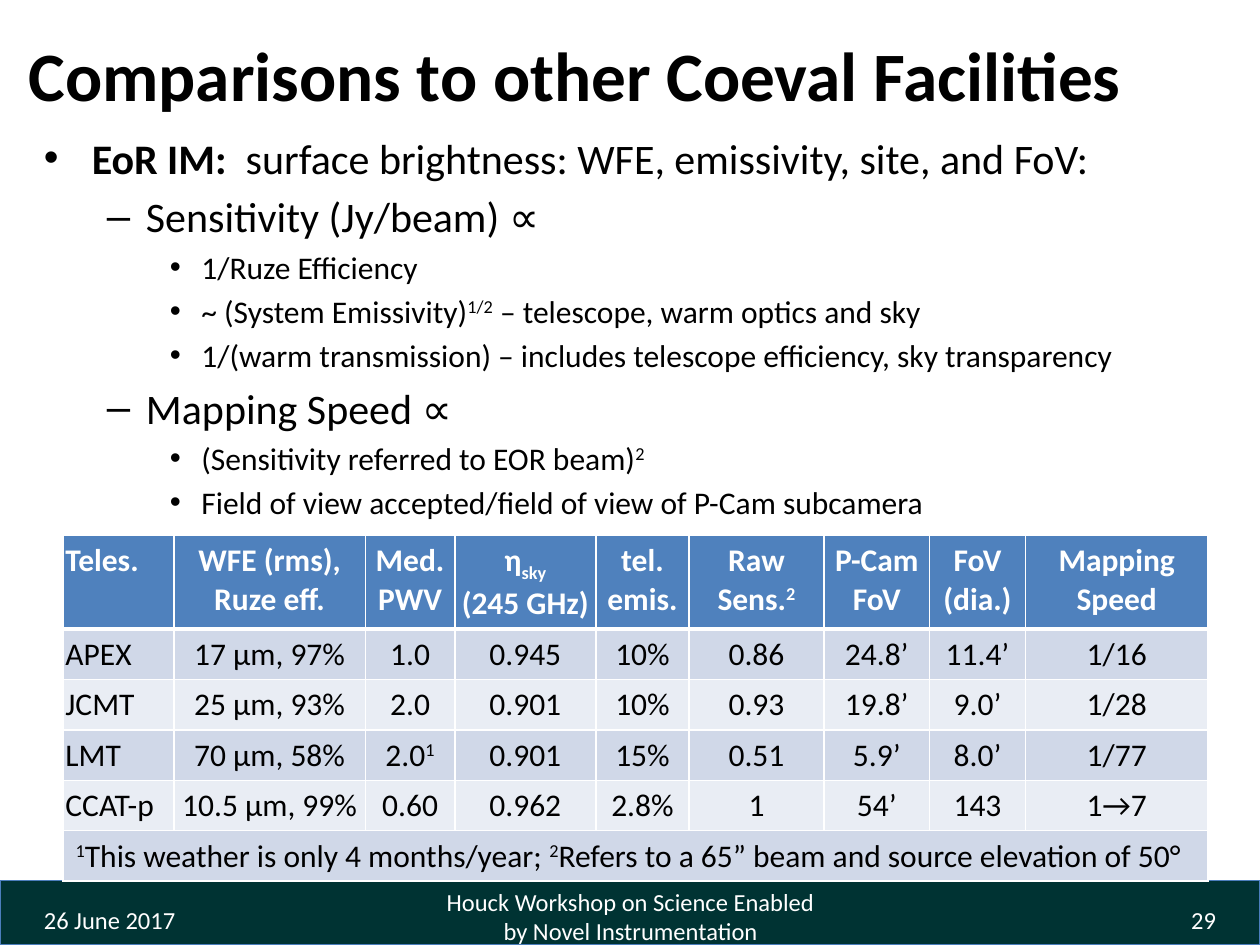
from dataclasses import dataclass

import pptx
import pptx.dml.color
import pptx.enum.shapes
import pptx.enum.text
import pptx.oxml
import pptx.oxml.ns
import pptx.util
from pptx.util import Inches

ALIGN = pptx.enum.text.PP_ALIGN
ANCHOR = pptx.enum.text.MSO_ANCHOR


@dataclass(frozen=True)
class Theme:
    font: str = "Calibri"
    black: str = "000000"
    white: str = "FFFFFF"
    footer: str = "003333"
    footer_line: str = "4B7EBC"
    header: str = "4F81BD"
    bands: tuple = ("D0D8E8", "E9EDF4")
    title_size: float = 39.6
    large: float = 24
    normal: float = 18
    small: float = 14


@dataclass(frozen=True)
class Level:
    margin: float
    indent: float
    char: str


@dataclass(frozen=True)
class Bullet:
    level: int
    size: float
    text: str


@dataclass(frozen=True)
class Label:
    text: str
    box: tuple
    size: float
    color: str
    align: int
    bold: bool = False


T = Theme()
LEVELS = (Level(0.38, -0.38, "•"), Level(0.81, -0.31, "–"), Level(1.25, -0.25, "•"))

# In rich text, "|" separates runs; a leading ^ raises, _ lowers, * makes bold
BULLETS = (
    Bullet(0, T.large, "*EoR IM:  |surface brightness: WFE, emissivity, site, and FoV:"),
    Bullet(1, T.large, "Sensitivity (Jy/beam) ∝"),
    Bullet(2, T.normal, "1/Ruze Efficiency"),
    Bullet(2, T.normal, "~ (System Emissivity)|^1/2| – telescope, warm optics and sky"),
    Bullet(2, T.normal, "1/(warm transmission) – includes telescope efficiency, sky transparency"),
    Bullet(1, T.large, "Mapping Speed ∝"),
    Bullet(2, T.normal, "(Sensitivity referred to EOR beam)|^2"),
    Bullet(2, T.normal, "Field of view accepted/field of view of P-Cam subcamera"),
)

LABELS = (
    Label("Comparisons to other Coeval Facilities", (-0.02, -0.04, 9.17, 1.25),
          T.title_size, T.black, ALIGN.CENTER, True),
    Label("29", (7.42, 7.1, 2.33, 0.4), T.small, T.white, ALIGN.RIGHT),
    Label("Houck Workshop on Science Enabled by Novel Instrumentation",
          (3.42, 7.07, 3.17, 0.4), T.small, T.white, ALIGN.CENTER),
    Label("26 June 2017", (0.25, 7.1, 2.33, 0.4), T.small, T.white, ALIGN.LEFT),
)

COLUMNS = (0.88, 1.52, 0.71, 1.12, 0.74, 1.07, 0.84, 0.76, 1.45)
ROWS = (
    ("Teles.", "WFE (rms), Ruze eff.", "Med. PWV", "η|_sky\n(245 GHz)", "tel. emis.",
     "Raw Sens.|^2", "P-Cam FoV", "FoV\n(dia.)", "Mapping Speed"),
    ("APEX", "17 μm, 97%", "1.0", "0.945", "10%", "0.86", "24.8’", "11.4’", "1/16"),
    ("JCMT", "25 μm, 93%", "2.0", "0.901", "10%", "0.93", "19.8’", "9.0’", "1/28"),
    ("LMT", "70 μm, 58%", "2.0|^1", "0.901", "15%", "0.51", "5.9’", "8.0’", "1/77"),
    ("CCAT-p", "10.5 μm, 99%", "0.60", "0.962", "2.8%", "1", "54’", "143", "1→7"),
)
NOTE = "^1|This weather is only 4 months/year; |^2|Refers to a 65” beam and source elevation of 50°"
HEADER_HEIGHT, ROW_HEIGHT = 0.74, 0.4


def rgb(value: str):
    return pptx.dml.color.RGBColor.from_string(value)


def add_xml(parent, tag: str, body: str) -> None:
    ns = pptx.oxml.ns.nsdecls("a")
    parent.append(pptx.oxml.parse_xml(f"<a:{tag} {ns} {body}"))


def add_rich(p, text: str, size: float, color: str, bold: bool = False) -> None:
    for part in text.split("|"):
        mark = part[0] if part[0] in "^_*" else ""
        r = p.add_run()
        r.text = part[len(mark):]
        r.font.name, r.font.size = T.font, pptx.util.Pt(size)
        r.font.bold = bold or mark == "*"
        r.font.color.rgb = rgb(color)
        if mark in ("^", "_"):
            r._r.get_or_add_rPr().set("baseline", "30000" if mark == "^" else "-25000")


def add_box(s, box: tuple):
    tf = s.shapes.add_textbox(*map(Inches, box)).text_frame
    tf.word_wrap = True
    return tf


def add_label(s, label: Label) -> None:
    tf = add_box(s, label.box)
    tf.vertical_anchor = ANCHOR.MIDDLE
    p = tf.paragraphs[0]
    p.alignment = label.align
    add_rich(p, label.text, label.size, label.color, label.bold)


def add_bullets(s, box: tuple) -> None:
    tf = add_box(s, box)
    for i, bullet in enumerate(BULLETS):
        p = tf.add_paragraph() if i else tf.paragraphs[0]
        level = LEVELS[bullet.level]
        pPr = p._p.get_or_add_pPr()
        pPr.set("marL", str(Inches(level.margin)))
        pPr.set("indent", str(Inches(level.indent)))
        add_xml(pPr, "buFont", 'typeface="Arial"/>')
        add_xml(pPr, "buChar", f'char="{level.char}"/>')
        p.level = bullet.level
        if i:
            p.space_before = pptx.util.Pt(bullet.size * 0.2)
        add_rich(p, bullet.text, bullet.size, T.black)


def style_cell(cell, fill: str, top: float = 1, bottom: float = 1) -> None:
    tcPr = cell._tc.get_or_add_tcPr()
    for tag, width in (("lnL", 1), ("lnR", 1), ("lnT", top), ("lnB", bottom)):
        add_xml(tcPr, tag, f'w="{pptx.util.Pt(width)}"><a:solidFill>'
                f'<a:srgbClr val="{T.white}"/></a:solidFill></a:{tag}>')
    cell.fill.solid()
    cell.fill.fore_color.rgb = rgb(fill)


def fill_cell(cell, text: str, color: str, bold: bool, align: int) -> None:
    tf = cell.text_frame
    for i, line in enumerate(text.split("\n")):
        p = tf.add_paragraph() if i else tf.paragraphs[0]
        p.alignment = align
        add_rich(p, line, T.normal, color, bold)


def add_facility_table(s) -> None:
    n_rows = len(ROWS) + 1
    height = HEADER_HEIGHT + ROW_HEIGHT * len(ROWS)
    table = s.shapes.add_table(n_rows, len(COLUMNS), Inches(0.5), Inches(4.25),
                               Inches(sum(COLUMNS)), Inches(height)).table
    for column, width in zip(table.columns, COLUMNS):
        column.width = Inches(width)
    for i, row in enumerate(table.rows):
        header = i == 0
        row.height = Inches(ROW_HEIGHT if i else HEADER_HEIGHT)
        for j, cell in enumerate(row.cells):
            style_cell(cell, T.header if header else T.bands[(i - 1) % 2],
                       top=3 if i == 1 else 1, bottom=3 if header else 1)
            if i < len(ROWS):
                cell.margin_left = cell.margin_right = Inches(0.02)
                fill_cell(cell, ROWS[i][j], T.white if header else T.black, header,
                          ALIGN.CENTER if j else ALIGN.LEFT)
    # Footnote across the last row
    note = table.cell(n_rows - 1, 0)
    note.merge(table.cell(n_rows - 1, len(COLUMNS) - 1))
    fill_cell(note, NOTE, T.black, False, ALIGN.LEFT)


def add_footer_bar(s) -> None:
    sp = s.shapes.add_shape(pptx.enum.shapes.MSO_SHAPE.RECTANGLE, Inches(0), Inches(6.99),
                            Inches(10), Inches(0.51))
    sp.shadow.inherit = False
    sp.fill.solid()
    sp.fill.fore_color.rgb = rgb(T.footer)
    sp.line.color.rgb = rgb(T.footer_line)
    sp.line.width = pptx.util.Pt(0.75)


def main() -> None:
    prs = pptx.Presentation()
    prs.slide_width, prs.slide_height = Inches(10), Inches(7.5)
    s = prs.slides.add_slide(prs.slide_layouts[6])
    add_footer_bar(s)
    add_bullets(s, (0.25, 1, 9.42, 3.17))
    add_facility_table(s)
    for label in LABELS:
        add_label(s, label)
    prs.save("out.pptx")


if __name__ == "__main__":
    main()
